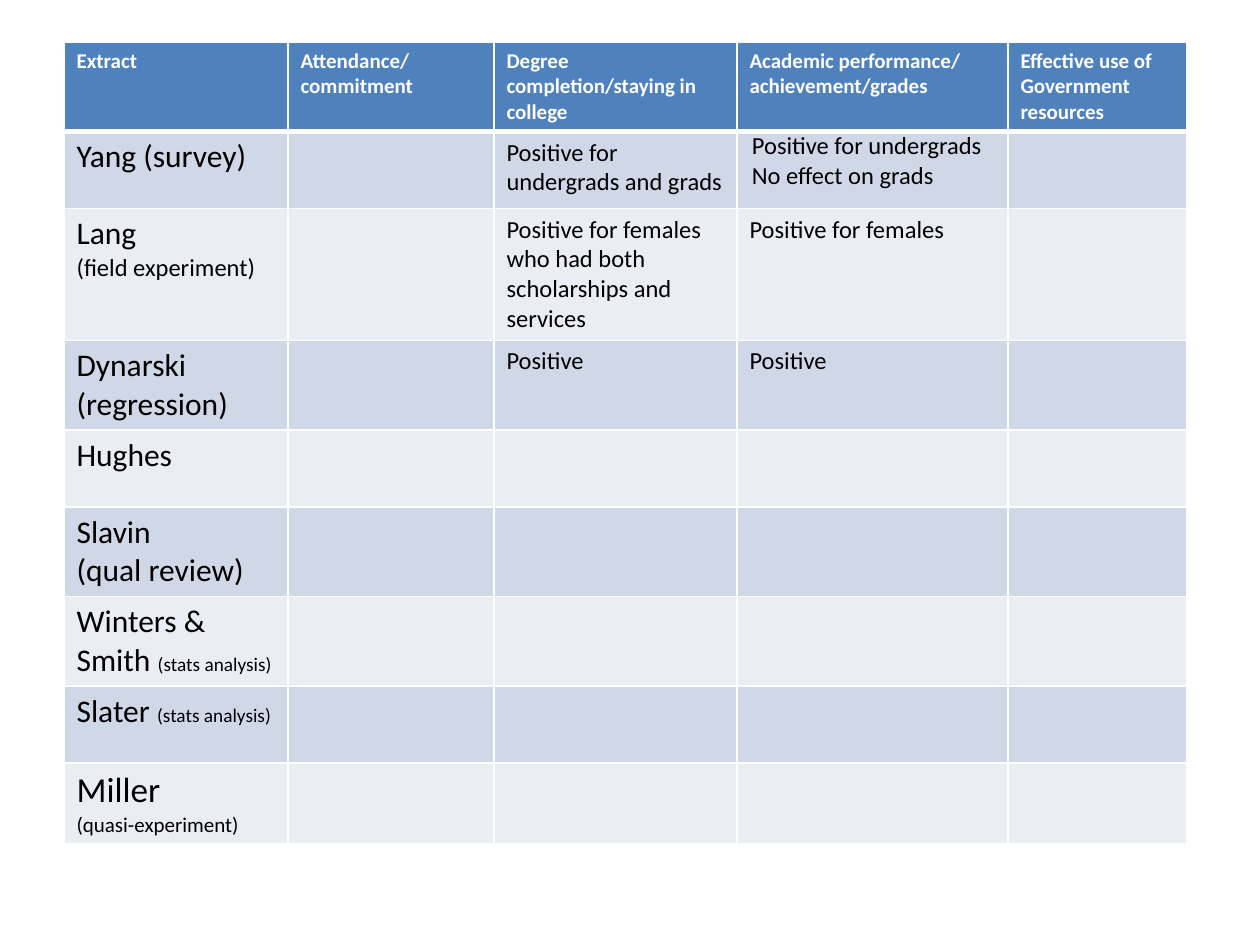
from lxml.etree import SubElement as Sub
from pptx import Presentation
from pptx.dml.color import RGBColor
from pptx.oxml.ns import qn
from pptx.util import Pt

SCALE = 914400 / 126  # EMU in one px
WHITE, BLACK, BLUE = "FFFFFF", "000000", "4F81BD"
BANDS = ["D0D8E8", "E9EDF4"]

COLS = [224, 206, 243, 271, 179]
ROW = 77
HEADS = [
    "Extract",
    "Attendance/\ncommitment",
    "Degree completion/staying in college",
    "Academic performance/\nachievement/grades",
    "Effective use of Government resources",
]
# Each study: runs of (text, size), then degree and performance findings
STUDIES = [
    ([("Yang (survey)", 18)], "Positive for undergrads and grads",
     "Positive for undergrads\nNo effect on grads"),
    ([("Lang\n", 18), ("(field experiment)", 14)],
     "Positive for females who had both scholarships and services",
     "Positive for females"),
    ([("Dynarski\n(regression)", 18)], "Positive", "Positive"),
    ([("Hughes", 18)], "", ""),
    ([("Slavin\n(qual review)", 18)], "", ""),
    ([("Winters & Smith ", 18), ("(stats analysis)", 11)], "", ""),
    ([("Slater ", 18), ("(stats analysis)", 11)], "", ""),
    ([("Miller\n", 20), ("(quasi-experiment)", 12)], "", ""),
]


def px(n):
    return round(n * SCALE)


def rgb(code):
    return RGBColor.from_string(code)


def write(frame, text, size=14, color=BLACK, bold=False):
    """Append text to the last paragraph; a line break starts a new one."""
    for i, line in enumerate(text.split("\n")):
        para = frame.add_paragraph() if i else frame.paragraphs[-1]
        if line:
            run = para.add_run()
            run.text = line
            font = run.font
            font.name, font.size, font.bold = "Calibri", Pt(size), bold
            font.color.rgb = rgb(color)


def paint(cell, color, base=1):
    """Set white borders, then the fill; base is the bottom line's width."""
    props = cell._tc.get_or_add_tcPr()
    for side, width in zip("LRTB", (1, 1, 1, base)):
        line = Sub(props, qn(f"a:ln{side}"), w=str(Pt(width)))
        Sub(Sub(line, qn("a:solidFill")), qn("a:srgbClr"), val=WHITE)
    cell.fill.solid()
    cell.fill.fore_color.rgb = rgb(color)


def add_grid(slide, left, top, wide, high):
    shape = slide.shapes.add_table(len(STUDIES) + 1, len(COLS),
                                   px(left), px(top), px(wide), px(high))
    grid = shape.table
    for col, width in zip(grid.columns, COLS):
        col.width = px(width)
    for row in grid.rows:
        row.height = px(ROW)

    # Header row
    for c, head in enumerate(HEADS):
        cell = grid.cell(0, c)
        paint(cell, BLUE, base=3)
        write(cell.text_frame, head, size=12, color=WHITE, bold=True)

    # One banded row for each study
    for r, (name, degree, grades) in enumerate(STUDIES, 1):
        for c in range(len(COLS)):
            paint(grid.cell(r, c), BANDS[(r - 1) % 2])
        for text, size in name:
            write(grid.cell(r, 0).text_frame, text, size=size)
        write(grid.cell(r, 2).text_frame, degree)
        write(grid.cell(r, 3).text_frame, grades)

    # The first performance finding sits at the top of its cell
    cell = grid.cell(1, 3)
    cell.margin_left = cell.margin_right = px(15)
    cell.margin_top = cell.margin_bottom = 0


def main():
    deck = Presentation()
    deck.slide_width, deck.slide_height = px(1260), px(945)
    slide = deck.slides.add_slide(deck.slide_layouts[6])
    add_grid(slide, 64, 42, sum(COLS), ROW * (len(STUDIES) + 1))
    deck.save("out.pptx")


if __name__ == "__main__":
    main()
